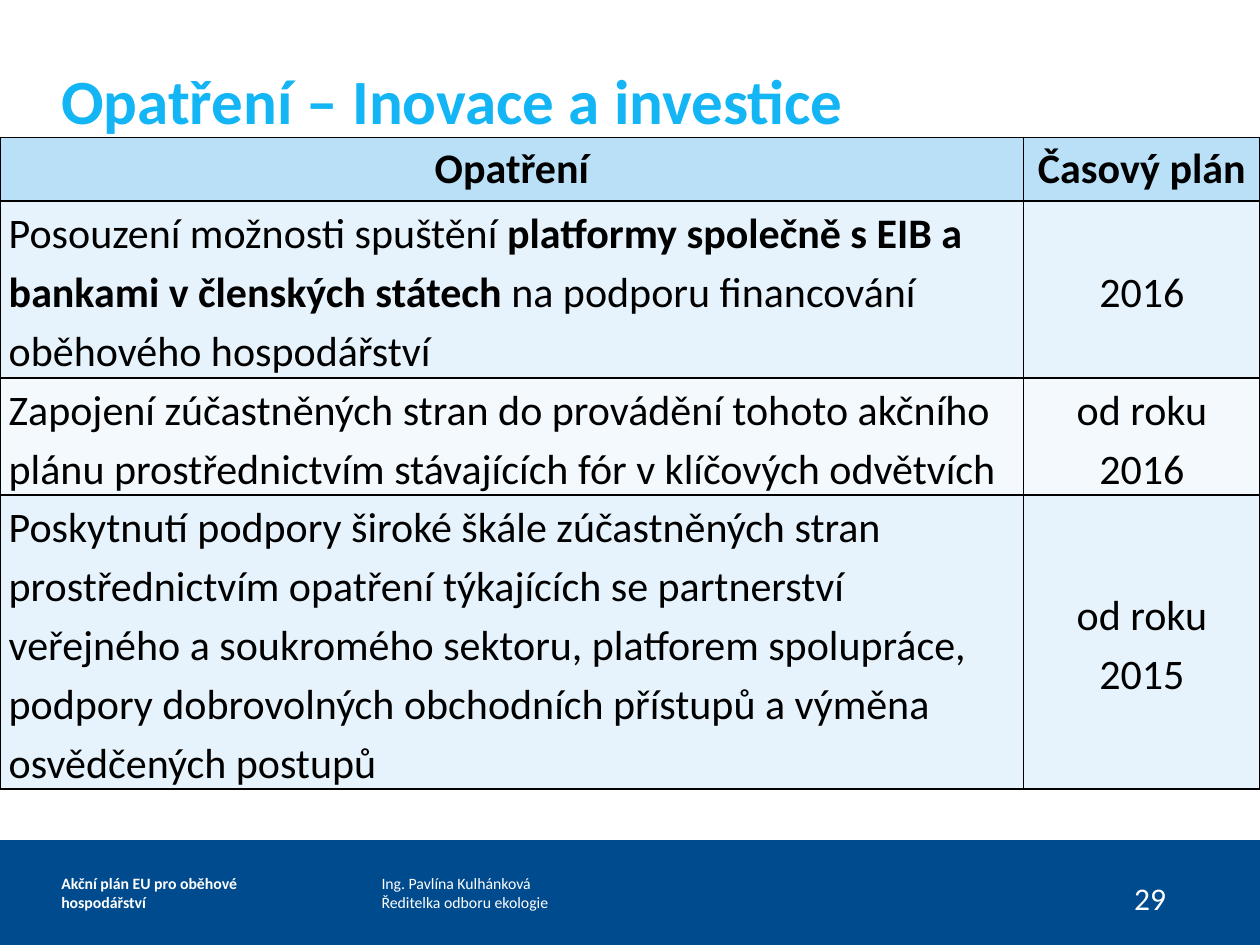
from lxml import etree
from pptx import Presentation
from pptx.dml.color import RGBColor
from pptx.enum import shapes, text
from pptx.oxml.ns import qn
from pptx.util import Pt

NAVY = RGBColor(0x00, 0x4B, 0x8D)
SKY = RGBColor(0x13, 0xB5, 0xF4)
WHITE = RGBColor(0xFF, 0xFF, 0xFF)
BLACK = RGBColor(0x00, 0x00, 0x00)
HEADER_FILL = RGBColor(0xB9, 0xE0, 0xF7)
ODD_FILL = RGBColor(0xE6, 0xF3, 0xFC)
EVEN_FILL = RGBColor(0xF3, 0xF9, 0xFD)


def add_run(paragraph, words, size, color, bold=False):
    run = paragraph.add_run()
    run.text = words
    run.font.name = "Calibri"
    run.font.size = Pt(size)
    run.font.bold = bold
    run.font.color.rgb = color


def add_borders(cell):
    properties = cell._tc.get_or_add_tcPr()
    for position, side in enumerate(("a:lnL", "a:lnR", "a:lnT", "a:lnB")):
        line = etree.Element(qn(side), w=str(Pt(1)))
        fill = etree.SubElement(line, qn("a:solidFill"))
        etree.SubElement(fill, qn("a:srgbClr"), val=str(BLACK))
        properties.insert(position, line)


prs = Presentation()
prs.slide_width, prs.slide_height = Pt(720), Pt(540)
slide = prs.slides.add_slide(prs.slide_layouts[6])

# Navy background with a white content area above the footer
slide.background.fill.solid()
slide.background.fill.fore_color.rgb = NAVY
content_area = slide.shapes.add_shape(
    shapes.MSO_SHAPE.RECTANGLE, 0, 0, Pt(720), Pt(480))
content_area.shadow.inherit = False
content_area.fill.solid()
content_area.fill.fore_color.rgb = WHITE
content_area.line.fill.background()

# Title and footer: left, top, width, height, size, bold, colour, lines
labels = [
    (35, 35, 649, 44, 36, True, SKY, ["Opatření – Inovace a investice"]),
    (35, 480, 148, 60, 9, True, WHITE, ["Akční plán EU pro oběhové hospodářství"]),
    (218, 480, 142, 60, 9, False, WHITE,
     ["Ing. Pavlína Kulhánková", "Ředitelka odboru ekologie"]),
]
for left, top, width, height, size, bold, color, lines in labels:
    frame = slide.shapes.add_textbox(
        Pt(left), Pt(top), Pt(width), Pt(height)).text_frame
    frame.word_wrap = True
    frame.vertical_anchor = text.MSO_ANCHOR.MIDDLE
    frame.margin_left = frame.margin_right = 0
    frame.margin_top = frame.margin_bottom = 0
    for index, line in enumerate(lines):
        paragraph = frame.add_paragraph() if index else frame.paragraphs[0]
        add_run(paragraph, line, size, color, bold)

# Slide number
page_number = slide.shapes.add_textbox(Pt(641), Pt(499), Pt(36), Pt(29)).text_frame
page_number.word_wrap = True
add_run(page_number.paragraphs[0], "29", 18, WHITE)

# Measures: row height, fill, runs of the measure (text, bold), timetable
measures = [
    (36.5, HEADER_FILL, [("Opatření", True)], "Časový plán"),
    (101, ODD_FILL, [
        ("Posouzení možnosti spuštění ", False),
        ("platformy společně s EIB a bankami v členských státech", True),
        (" na podporu financování oběhového hospodářství", False)], "2016"),
    (67, EVEN_FILL, [
        ("Zapojení zúčastněných stran do provádění tohoto akčního plánu "
         "prostřednictvím stávajících fór v klíčových odvětvích", False)],
     "od roku 2016"),
    (168, ODD_FILL, [
        ("Poskytnutí podpory široké škále zúčastněných stran prostřednictvím "
         "opatření týkajících se partnerství veřejného a soukromého sektoru, "
         "platforem spolupráce, podpory dobrovolných obchodních přístupů "
         "a výměna osvědčených postupů", False)],
     "od roku 2015"),
]
table = slide.shapes.add_table(
    len(measures), 2, 0, Pt(78.5), Pt(720), Pt(372.5)).table
table.columns[0].width, table.columns[1].width = Pt(585), Pt(135)

for row, (height, fill, measure, timetable) in enumerate(measures):
    is_header = row == 0
    table.rows[row].height = Pt(height)
    for column, runs in enumerate((measure, [(timetable, is_header)])):
        cell = table.cell(row, column)
        cell.fill.solid()
        cell.fill.fore_color.rgb = fill
        add_borders(cell)
        paragraph = cell.text_frame.paragraphs[0]
        if is_header or column == 1:
            paragraph.alignment = text.PP_ALIGN.CENTER
        if not is_header:
            cell.vertical_anchor = text.MSO_ANCHOR.MIDDLE
            cell.margin_left = cell.margin_right = Pt(5)
            cell.margin_top = cell.margin_bottom = 0
            paragraph.line_spacing = 1.15
        for words, bold in runs:
            add_run(paragraph, words, 24, BLACK, bold)

prs.save("out.pptx")
